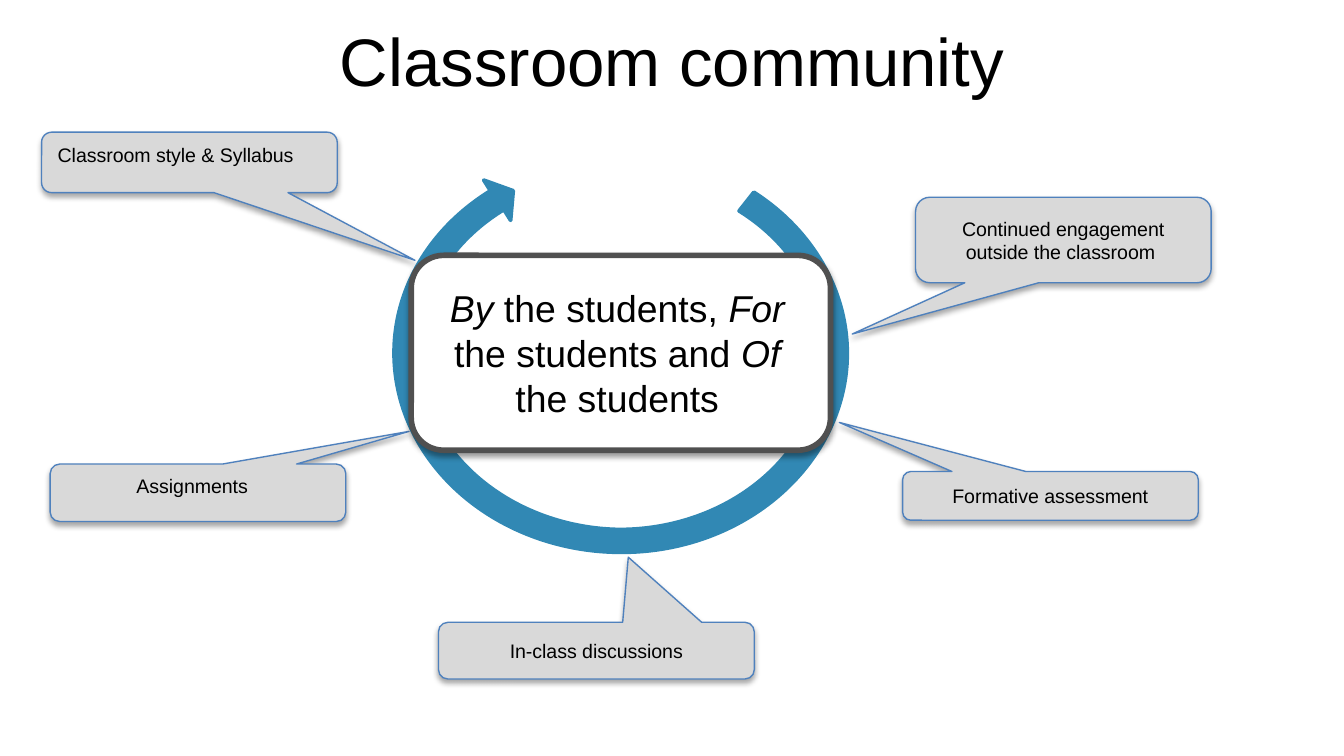
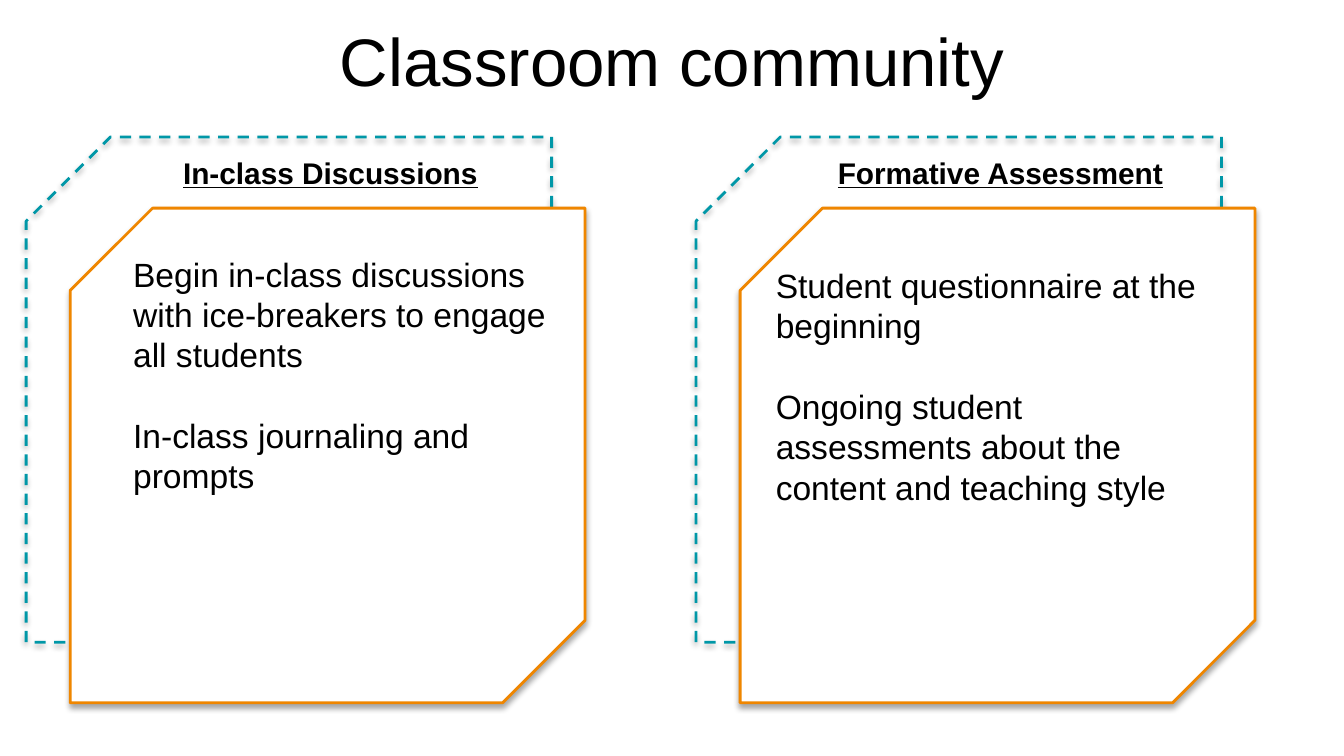
import lxml.etree
import pptx
import pptx.dml.color
import pptx.enum.dml
import pptx.enum.shapes
import pptx.enum.text
import pptx.oxml.ns
import pptx.util

Pt = pptx.util.Pt
qn = pptx.oxml.ns.qn
SHAPE = pptx.enum.shapes.MSO_SHAPE
ALIGN = pptx.enum.text.PP_ALIGN
ANCHOR = pptx.enum.text.MSO_ANCHOR

FONT = "Arial"
COLORS = {
    "text": "000000",
    "white": "FFFFFF",
    "callout": "D9D9D9",
    "callout_line": "4F81BD",
    "ring": "3188B4",
    "core_line": "505050",
    "back_card": "0097A7",
    "front_card": "EF8600",
}
TITLE = "Classroom community"
CORNER = 1 / 6
CARD_STEP = 358.9

# Ring arrow: each curve is two control points and an end point.
RING_START = (403.9, 103)
OUTER_CURVES = [
    ((446.4, 130.3), (464.4, 178.6), (447.8, 222.5)),
    ((431.3, 266.4), (384.5, 296.6), (331.2, 295.9)),
    ((278.6, 295.2), (232.6, 265), (216.7, 221)),
    ((200.9, 176.4), (219.6, 128.9), (262.8, 102.2)),
]
ARROW_HEAD = [((259.2, 96.5),), ((275, 102.2),), ((273.6, 118.1),), ((270, 112.3),)]
INNER_CURVES = [
    ((231.1, 136.1), (214.6, 178.6), (229, 217.4)),
    ((243.4, 256.3), (285.1, 283), (331.9, 283.7)),
    ((379.4, 283.7), (421.2, 257), (435.6, 218.2)),
    ((450.7, 179.3), (434.2, 136.8), (396, 113)),
]


def rgb(name):
    return pptx.dml.color.RGBColor.from_string(COLORS[name])


def place(sp, box):
    sp.left, sp.top, sp.width, sp.height = (Pt(v) for v in box)


def add_run(p, text, size, bold=False, italic=False, underline=False):
    r = p.add_run()
    r.text = text
    f = r.font
    f.name, f.size = FONT, Pt(size)
    f.bold, f.italic, f.underline = bold, italic, underline
    f.color.rgb = rgb("text")


def set_frame(sp, anchor, inset_y):
    tf = sp.text_frame
    tf.word_wrap = True
    tf.auto_size = pptx.enum.text.MSO_AUTO_SIZE.NONE
    tf.vertical_anchor = anchor
    tf.margin_left = tf.margin_right = Pt(7.2)
    tf.margin_top = tf.margin_bottom = Pt(inset_y)
    return tf


def add_shadow(sp, alpha):
    sp.shadow.inherit = False
    effects = sp._element.spPr.find(qn("a:effectLst"))
    shadow = lxml.etree.SubElement(
        effects, qn("a:outerShdw"), blurRad=str(Pt(3.1)), dist=str(Pt(1.8)),
        dir="5400000", rotWithShape="0")
    color = lxml.etree.SubElement(shadow, qn("a:srgbClr"), val="000000")
    lxml.etree.SubElement(color, qn("a:alpha"), val=str(alpha * 1000))


def add_box(s, kind, box, adjustments, fill, line, width, alpha=35):
    sp = s.shapes.add_shape(kind, *(Pt(v) for v in box))
    for i, value in enumerate(adjustments):
        sp.adjustments[i] = value
    if fill:
        sp.fill.solid()
        sp.fill.fore_color.rgb = rgb(fill)
    else:
        sp.fill.background()
    sp.line.color.rgb = rgb(line)
    sp.line.width = Pt(width)
    add_shadow(sp, alpha)
    return sp


def add_title(s):
    place(s.shapes.title, (0, 0, 720, 63.7))
    p = set_frame(s.shapes.title, ANCHOR.MIDDLE, 7.2).paragraphs[0]
    p.alignment = ALIGN.CENTER
    add_run(p, TITLE, 36)


def add_callout(s, box, tip, text=None):
    """Tip is the pointer's offset from the centre, before the flip."""
    sp = add_box(s, SHAPE.ROUNDED_RECTANGULAR_CALLOUT, box, (*tip, CORNER),
                 "callout", "callout_line", 0.75)
    sp._element.spPr.find(qn("a:xfrm")).set("flipH", "1")
    if text:
        p = set_frame(sp, ANCHOR.MIDDLE, 3.6).paragraphs[0]
        p.alignment = ALIGN.CENTER
        add_run(p, text, 10.5)


def add_label(s, box, runs, size, align=ALIGN.CENTER, **style):
    """Runs are (text, italic) pairs."""
    sp = s.shapes.add_textbox(*(Pt(v) for v in box))
    p = set_frame(sp, ANCHOR.TOP, 3.6).paragraphs[0]
    p.alignment = align
    for text, italic in runs:
        add_run(p, text, size, italic=italic, **style)


def add_ring_arrow(s):
    segments = OUTER_CURVES + ARROW_HEAD + INNER_CURVES
    builder = s.shapes.build_freeform(*(Pt(v) for v in RING_START))
    builder.add_line_segments(
        [(Pt(x), Pt(y)) for segment in segments for x, y in segment], close=True)
    sp = builder.convert_to_shape()
    lines = iter(list(sp._element.iter(qn("a:lnTo"))))
    for segment in segments:
        first, *others = [next(lines) for _ in segment]
        if others:
            first.tag = qn("a:cubicBezTo")
            for line in others:
                first.append(line[0])
                line.getparent().remove(line)
    sp.fill.solid()
    sp.fill.fore_color.rgb = rgb("ring")
    sp.line.color.rgb = rgb("ring")
    sp.line.width = Pt(2)
    sp.shadow.inherit = False


def add_card(s, body, x, heading, body_box, points):
    """Two offset snipped cards with a heading and a list in the placeholder."""
    back = add_box(s, SHAPE.SNIP_2_DIAG_RECTANGLE, (x + 19.4, 68, 270.7, 281.5),
                   (0, CORNER), None, "back_card", 1.5)
    back.line.dash_style = pptx.enum.dml.MSO_LINE.DASH
    front = add_box(s, SHAPE.SNIP_2_DIAG_RECTANGLE, (x + 43, 106.1, 265, 275.8),
                    (0, CORNER), "white", "front_card", 1.5)
    back.rotation = front.rotation = 90
    add_label(s, (x + 64, 79.2, 226, 26.6), [(heading, False)], 16,
              bold=True, underline=True)

    s.shapes.element.append(body._element)  # bring in front of the cards
    place(body, body_box)
    tf = set_frame(body, ANCHOR.TOP, 7.2)
    for i, text in enumerate(points):
        p = tf.add_paragraph() if i else tf.paragraphs[0]
        p.alignment = ALIGN.LEFT
        p.space_before = Pt(21.6 if i else 0)
        pPr = p._p.get_or_add_pPr()
        pPr.set("marL", "0")
        pPr.set("indent", "0")
        lxml.etree.SubElement(pPr, qn("a:buNone"))
        add_run(p, text, 18)


def build_overview(prs):
    s = prs.slides.add_slide(prs.slide_layouts[5])
    add_title(s)
    add_callout(s, (22.3, 70.8, 158.4, 32.4), (-0.763, 1.619))
    add_callout(s, (26.9, 248.6, 158.4, 30.8), (-0.714, -1.068))
    add_ring_arrow(s)
    add_box(s, SHAPE.ROUNDED_RECTANGLE, (220.3, 136.8, 224.6, 104.4), (CORNER,),
            "white", "core_line", 3, alpha=38)
    add_label(s, (23.8, 250.6, 158.4, 22.3), [("Assignments", False)], 10.5)
    add_label(s, (23.8, 73, 164.9, 36.7), [("Classroom style & Syllabus", False)],
              10.5, ALIGN.LEFT)
    add_label(s, (219.8, 149.2, 221.8, 80),
              [("By", True), (" the students, ", False), ("For", True),
               (" the students and ", False), ("Of", True), (" the students", False)], 20)
    add_callout(s, (234.9, 333.4, 169.2, 30.4), (-0.101, -1.648), "In-class discussions")
    add_callout(s, (483.6, 252.6, 158.4, 26.1), (0.714, -1.507), "Formative assessment")
    add_callout(s, (490.5, 105.7, 158.4, 45.8), (0.714, 1.1),
                "Continued engagement outside the classroom ")


def build_details(prs):
    s = prs.slides.add_slide(prs.slide_layouts[3])
    add_title(s)
    cards = [
        ("In-class Discussions", (64.1, 128.7, 249, 253),
         ["Begin in-class discussions with ice-breakers to engage all students",
          "In-class journaling and prompts"]),
        ("Formative Assessment", (408.4, 134.7, 251, 236),
         ["Student questionnaire at the beginning",
          "Ongoing student assessments about the content and teaching style"]),
    ]
    bodies = [s.placeholders[1], s.placeholders[2]]
    for i, (body, card) in enumerate(zip(bodies, cards)):
        add_card(s, body, i * CARD_STEP, *card)


def main():
    prs = pptx.Presentation()
    prs.slide_width, prs.slide_height = Pt(720), Pt(405)
    build_overview(prs)
    build_details(prs)
    prs.save("out.pptx")


if __name__ == "__main__":
    main()
